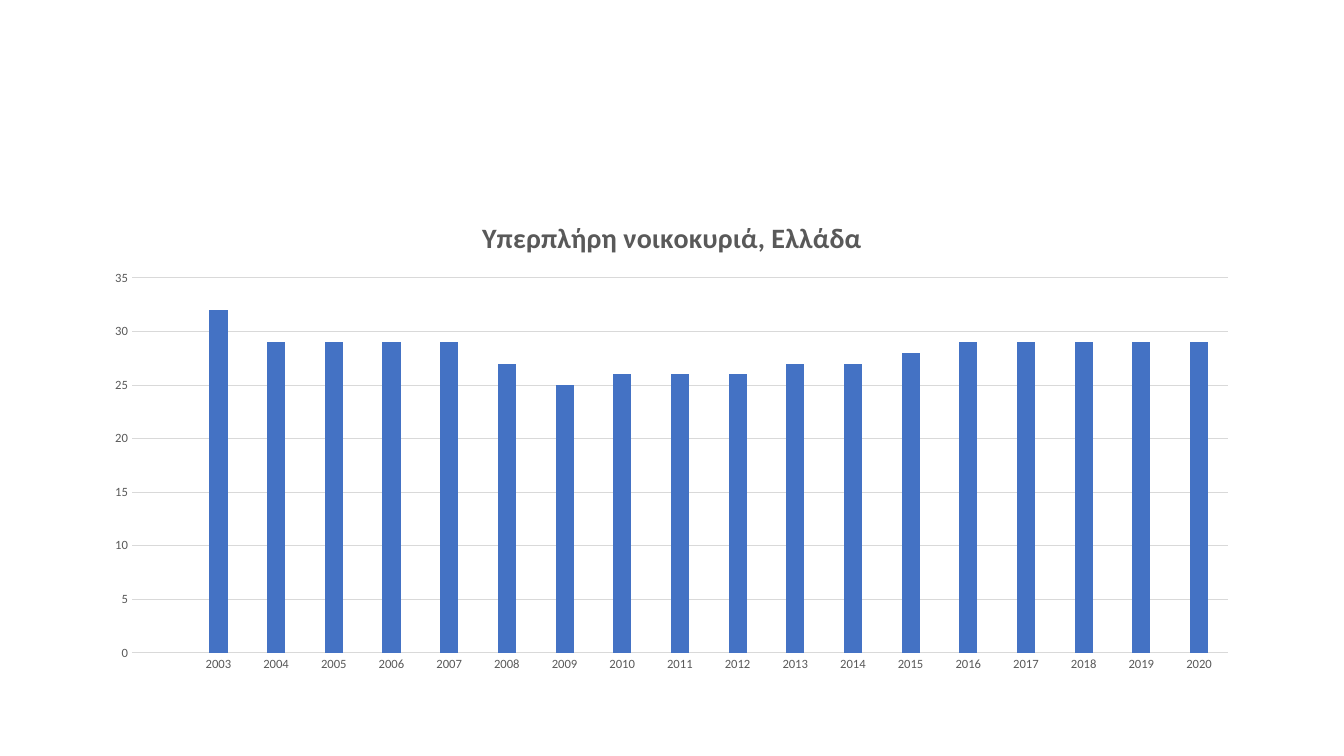
import pptx
import pptx.chart.data
import pptx.dml.color
import pptx.enum.chart
import pptx.oxml
import pptx.oxml.ns
import pptx.util
from dataclasses import dataclass

PX = 914400 / 100.8  # EMU in one px


@dataclass(frozen=True)
class Theme:
    font: str = "Calibri"
    bar: str = "4472C4"
    text: str = "595959"
    rule: str = "D9D9D9"
    title_size: int = 20
    label_size: int = 9
    rule_width: float = 0.75


THEME = Theme()
SLIDE = (1344, 756)
CHART = (93, 202, 1159, 480)
TITLE_AT = (477, 213)
PLOT = (132, 278, 1096, 375)

TITLE = "Υπερπλήρη νοικοκυριά, Ελλάδα"
YEARS = range(2003, 2021)
SHARES = (32, 29, 29, 29, 29, 27, 25, 26, 26,
          26, 27, 27, 28, 29, 29, 29, 29, 29)


def emu(px):
    return pptx.util.Emu(round(px * PX))


def rgb(value):
    return pptx.dml.color.RGBColor.from_string(value)


def format_font(font, size, color=THEME.text, bold=False):
    font.name = THEME.font
    font.size = pptx.util.Pt(size)
    font.bold = bold
    font.color.rgb = rgb(color)


def write_text(tf, text, **fmt):
    r = tf.paragraphs[0].add_run()
    r.text = text
    format_font(r.font, **fmt)


def format_line(line):
    line.color.rgb = rgb(THEME.rule)
    line.width = pptx.util.Pt(THEME.rule_width)


def format_axis(axis):
    axis.major_tick_mark = pptx.enum.chart.XL_TICK_MARK.NONE
    axis.minor_tick_mark = pptx.enum.chart.XL_TICK_MARK.NONE
    format_font(axis.tick_labels.font, size=THEME.label_size)


def place(element, index, left, top, width=None, height=None, inner=False):
    """Fix a chart part at slide coordinates, stored as fractions of the chart."""
    for old in element.xpath("c:layout"):
        element.remove(old)
    x, y, w, h = CHART
    parts = [("layoutTarget", "inner")] if inner else []
    parts += [("xMode", "edge"), ("yMode", "edge"),
              ("x", (left - x) / w), ("y", (top - y) / h)]
    if width:
        parts += [("w", width / w), ("h", height / h)]
    body = "".join(f'<c:{name} val="{value}"/>' for name, value in parts)
    element.insert(index, pptx.oxml.parse_xml(
        f'<c:layout {pptx.oxml.ns.nsdecls("c")}>'
        f'<c:manualLayout>{body}</c:manualLayout></c:layout>'))


def add_column_chart(slide):
    # The first category is an empty slot before the first year
    data = pptx.chart.data.CategoryChartData()
    data.categories = ["", *map(str, YEARS)]
    data.add_series("Series 1", (None, *SHARES))
    chart = slide.shapes.add_chart(
        pptx.enum.chart.XL_CHART_TYPE.COLUMN_CLUSTERED,
        *map(emu, CHART), data).chart
    format_font(chart.font, size=10, color="000000")
    chart.has_legend = False

    # Title
    chart.has_title = True
    title = chart.chart_title
    write_text(title.text_frame, TITLE, size=THEME.title_size, bold=True)
    title.include_in_layout = False
    place(title._element, 1, *TITLE_AT)

    # Columns
    plot = chart.plots[0]
    plot.gap_width = 219
    plot.overlap = -27
    plot.vary_by_categories = False
    fill = plot.series[0].format.fill
    fill.solid()
    fill.fore_color.rgb = rgb(THEME.bar)
    place(chart._chartSpace.xpath("c:chart/c:plotArea")[0], 0, *PLOT, inner=True)

    # Axes
    format_axis(chart.category_axis)
    format_line(chart.category_axis.format.line)
    values = chart.value_axis
    format_axis(values)
    values.minimum_scale, values.maximum_scale, values.major_unit = 0, 35, 5
    values.format.line.fill.background()
    values.has_major_gridlines = True
    format_line(values.major_gridlines.format.line)


def main():
    prs = pptx.Presentation()
    prs.slide_width, prs.slide_height = map(emu, SLIDE)
    slide = prs.slides.add_slide(prs.slide_layouts[6])
    add_column_chart(slide)
    prs.save("out.pptx")


if __name__ == "__main__":
    main()
